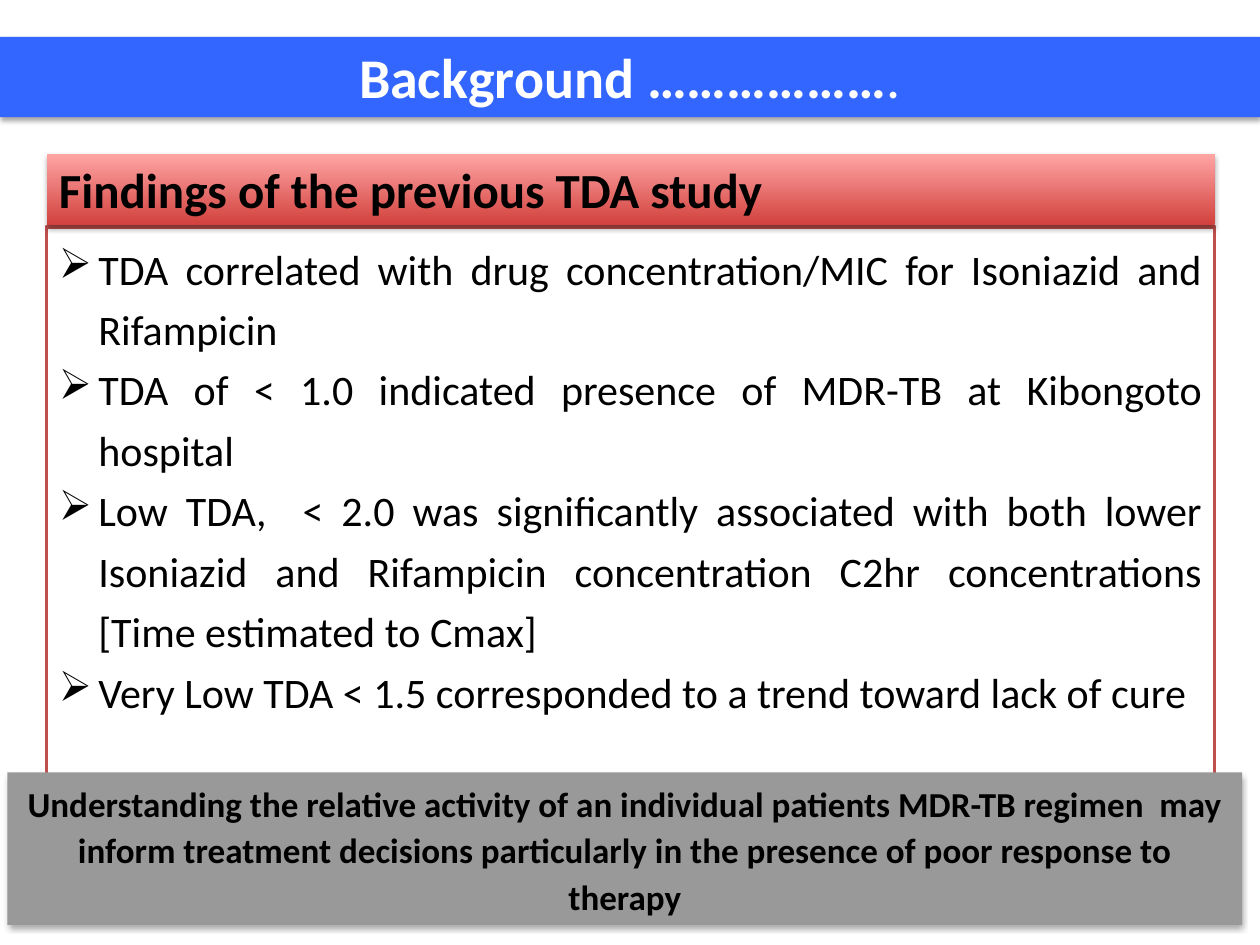
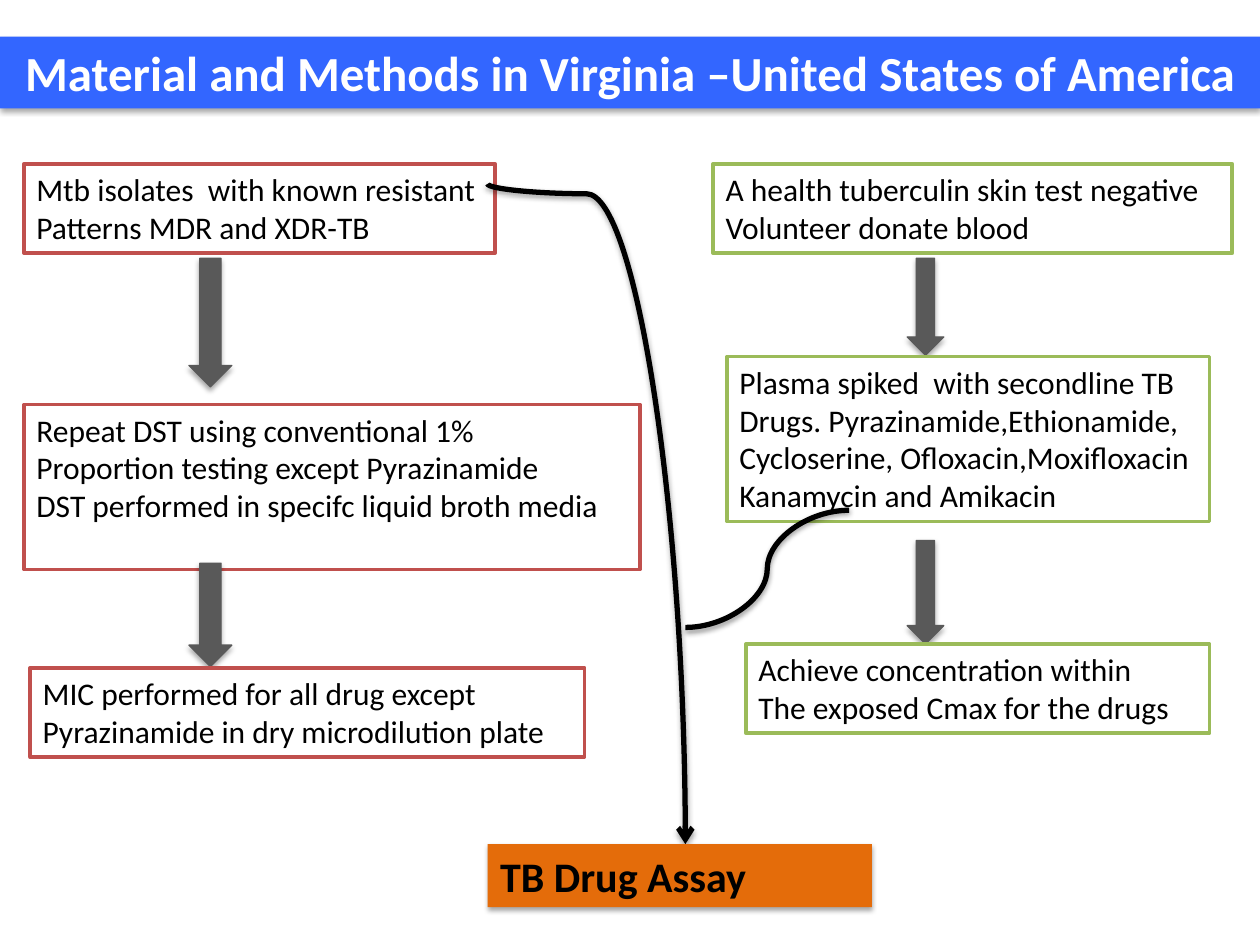
from lxml import etree
from pptx import Presentation
from pptx import util as u
from pptx.dml.color import RGBColor
from pptx.enum import shapes, text
from pptx.oxml.ns import qn

Pt = u.Pt
FONT = "Calibri"
COLORS = {
    "band": "3366FF", "white": "FFFFFF", "black": "000000",
    "red": "C0504D", "green": "9BBB59", "arrow": "595959",
    "header_dark": "D1403C", "header_light": "FFA6A5",
    "conclusion": "999999", "assay": "E46C0A",
}
RECT = shapes.MSO_SHAPE.RECTANGLE
CENTER, JUSTIFY, LEFT = (text.PP_ALIGN.CENTER, text.PP_ALIGN.JUSTIFY,
                         text.PP_ALIGN.LEFT)


def rgb(name):
    return RGBColor.from_string(COLORS[name])


def cast_shadow(effects, alpha=35, distance=1.8):
    """Fill an effect list with a soft shadow that falls straight down."""
    outer = etree.SubElement(
        effects, qn("a:outerShdw"), blurRad=str(Pt(3.1)),
        dist=str(Pt(distance)), dir="5400000", rotWithShape="0")
    color = etree.SubElement(outer, qn("a:srgbClr"), val=COLORS["black"])
    etree.SubElement(color, qn("a:alpha"), val=str(alpha * 1000))


def block(slide, place, fill, line=None, width=2, shadow=False, kind=RECT):
    shape = slide.shapes.add_shape(kind, *(Pt(v) for v in place))
    shape.fill.solid()
    shape.fill.fore_color.rgb = rgb(fill)
    if line:
        shape.line.color.rgb = rgb(line)
        shape.line.width = Pt(width)
    else:
        shape.line.fill.background()
    shape.shadow.inherit = False
    if shadow:
        cast_shadow(shape._element.spPr.find(qn("a:effectLst")))
    return shape


def write(shape, paragraphs, size=18, bold=False, color="black", align=LEFT,
          spacing=1.0, bullet=None):
    """Each paragraph is a string, or a list of (string, bold) runs."""
    frame = shape.text_frame
    frame.word_wrap = True
    frame.vertical_anchor = text.MSO_ANCHOR.TOP
    for i, content in enumerate(paragraphs):
        para = frame.add_paragraph() if i else frame.paragraphs[0]
        para.alignment = align
        para.line_spacing = spacing
        if bullet:
            props = para._p.get_or_add_pPr()
            props.set("marL", str(Pt(22.5)))
            props.set("indent", str(-Pt(22.5)))
            etree.SubElement(props, qn("a:buChar"), char=bullet)
        runs = [(content, bold)] if isinstance(content, str) else content
        for words, heavy in runs:
            run = para.add_run()
            run.text = words
            run.font.name = FONT
            run.font.size = Pt(size)
            run.font.bold = heavy
            run.font.color.rgb = rgb(color)


def title_band(slide, title, size, height):
    band = block(slide, (0, 21, 720, height), "band", shadow=True)
    write(band, [title], size=size, bold=True, color="white", align=CENTER)


def step_box(slide, left, top, width, outline, lines, rows, align=LEFT):
    height = 7.9 + 21.6 * rows
    box = block(slide, (left, top, width, height), "white", line=outline)
    write(box, lines, align=align)


def down_arrow(slide, left, top, width, height):
    block(slide, (left, top, width, height), "arrow", line="arrow",
          width=0.75, shadow=True, kind=shapes.MSO_SHAPE.DOWN_ARROW)


def curve(slide, start, end, upright=False, bend=None, arrow=False):
    """Draw an S-curve; an upright one leaves and arrives vertically."""
    (x1, y1), (x2, y2) = start, end
    if upright:  # swap the sides around the centre, then turn the frame back
        cx, cy = (x1 + x2) / 2, (y1 + y2) / 2
        half_w, half_h = (x2 - x1) / 2, (y2 - y1) / 2
        x1, y1, x2, y2 = cx + half_h, cy - half_w, cx - half_h, cy + half_w
    link = slide.shapes.add_connector(
        shapes.MSO_CONNECTOR.CURVE, Pt(x1), Pt(y1), Pt(x2), Pt(y2))
    link.line.color.rgb = rgb("black")
    link.line.width = Pt(3)
    props = link._element.spPr
    if upright:
        props.find(qn("a:xfrm")).set("rot", str(270 * 60000))
    if bend is not None:
        guides = props.find(qn("a:prstGeom")).get_or_add_avLst()
        etree.SubElement(guides, qn("a:gd"), name="adj1",
                         fmla=f"val {round(bend * 100000)}")
    if arrow:
        etree.SubElement(props.find(qn("a:ln")), qn("a:tailEnd"), type="arrow")
    cast_shadow(etree.SubElement(props, qn("a:effectLst")), 38, 1.6)


def background_slide(slide):
    title_band(slide, [("Background ………………", True), (".", False)], 32, 46)

    # Findings panel under its header
    left, width = 26.64, 667.44
    findings = block(slide, (left, 129.6, width, 355), "white", line="red")
    write(findings, [
        "TDA correlated with drug concentration/MIC for Isoniazid and "
        "Rifampicin",
        "TDA of < 1.0 indicated presence of MDR-TB at Kibongoto hospital",
        "Low TDA,  < 2.0 was significantly associated with both lower "
        "Isoniazid and Rifampicin concentration C2hr concentrations "
        "[Time estimated to Cmax]",
        "Very Low TDA < 1.5 corresponded to a trend toward lack of cure",
    ], size=24, align=JUSTIFY, spacing=1.2, bullet="➢")

    header = block(slide, (left, 87.84, width, 41), "red", shadow=True)
    header.fill.gradient()
    header.fill.gradient_angle = 90
    for stop, tone in zip(header.fill.gradient_stops,
                          ("header_dark", "header_light")):
        stop.color.rgb = rgb(tone)
    write(header, ["Findings of the previous TDA study"], size=28, bold=True)

    # Conclusion
    conclusion = block(slide, (4.32, 441.36, 705.6, 87.12), "conclusion",
                       shadow=True)
    write(conclusion, [
        "Understanding the relative activity of an individual patients MDR-TB "
        "regimen  may inform treatment decisions particularly in the presence "
        "of poor response to therapy",
    ], size=20, bold=True, align=CENTER, spacing=1.1)


def methods_slide(slide):
    title_band(slide,
               "Material and Methods in Virginia –United States of America",
               28, 41)

    # Isolate testing, left column
    step_box(slide, 13.68, 93.6, 269.28, "red",
             ["Mtb isolates  with known resistant",
              "Patterns MDR and XDR-TB"], rows=2)
    down_arrow(slide, 108, 147.6, 24.48, 73.44)
    step_box(slide, 13.68, 231.12, 352.08, "red",
             ["Repeat DST using conventional 1%",
              "Proportion testing except Pyrazinamide",
              "DST performed in specifc liquid broth media"],
             rows=4, align=JUSTIFY)
    down_arrow(slide, 108, 321.84, 24.48, 59.04)
    step_box(slide, 17.28, 381.6, 316.8, "red",
             ["MIC performed for all drug except",
              "Pyrazinamide in dry microdilution plate"], rows=2)

    # Plasma preparation, right column
    step_box(slide, 407.52, 93.6, 296.64, "green",
             ["A health tuberculin skin test negative",
              "Volunteer donate blood"], rows=2)
    down_arrow(slide, 518.4, 147.6, 20.88, 55.44)
    step_box(slide, 415.44, 203.76, 275.76, "green",
             ["Plasma spiked  with secondline TB",
              "Drugs. Pyrazinamide,Ethionamide,",
              "Cycloserine, Ofloxacin,Moxifloxacin",
              "Kanamycin and Amikacin"], rows=4)
    down_arrow(slide, 518.4, 308.88, 20.88, 59.04)
    step_box(slide, 426.24, 367.92, 264.96, "green",
             ["Achieve concentration within",
              "The exposed Cmax for the drugs"], rows=2)

    # Both columns lead to the assay
    curve(slide, (278.64, 105.12), (391.68, 482.4), upright=True, bend=0.015,
          arrow=True)
    curve(slide, (485.28, 291.6), (391.68, 358.56))
    assay = block(slide, (278.64, 482.4, 219.6, 36), "assay", shadow=True)
    write(assay, ["TB Drug Assay"], size=24, bold=True)


def main():
    deck = Presentation()
    deck.slide_width, deck.slide_height = Pt(720), Pt(540)
    for build in (background_slide, methods_slide):
        build(deck.slides.add_slide(deck.slide_layouts[6]))
    deck.save("out.pptx")


if __name__ == "__main__":
    main()
